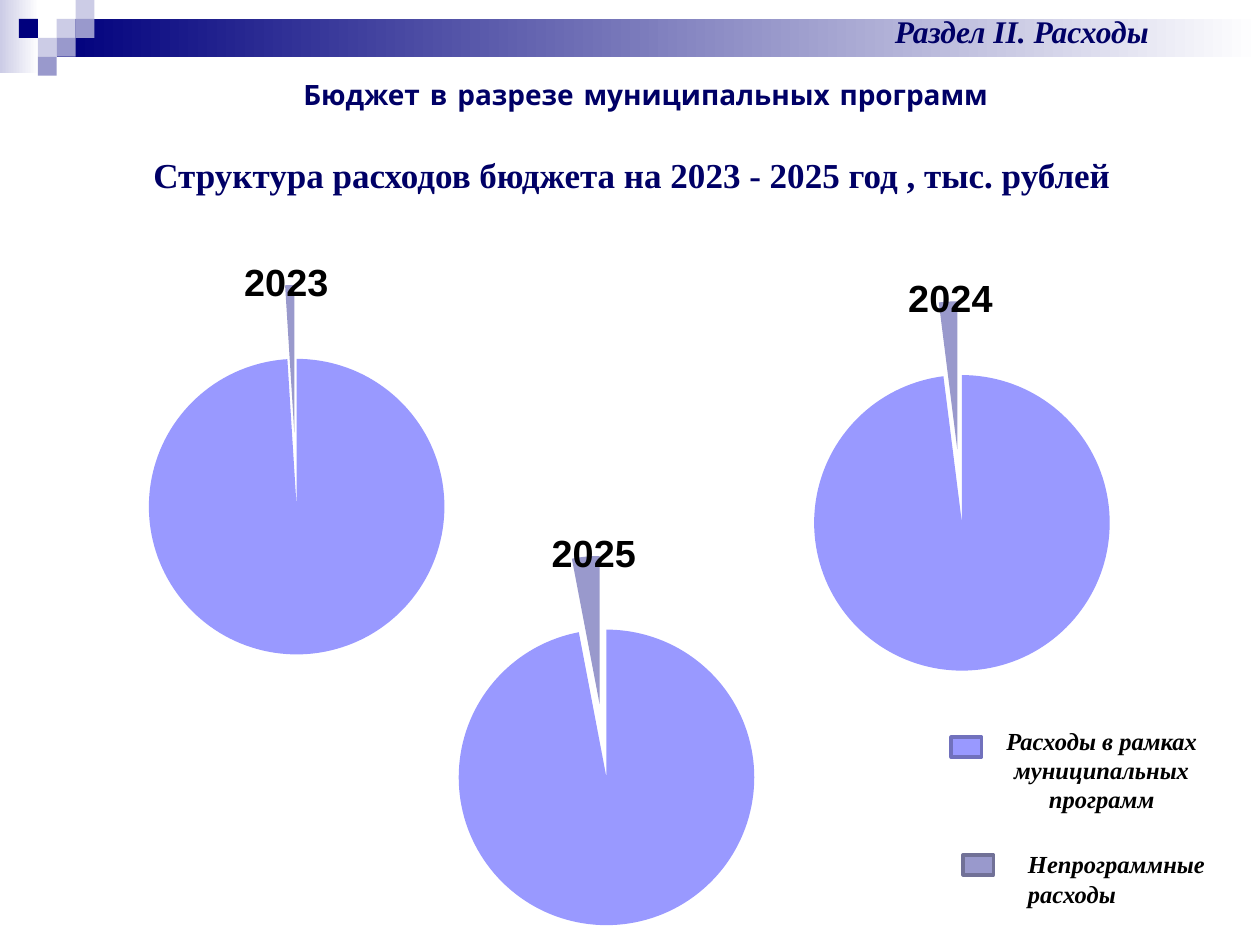
from lxml.etree import SubElement
from pptx import Presentation
from pptx.chart.data import CategoryChartData
from pptx.dml.color import RGBColor
from pptx.enum.chart import XL_CHART_TYPE
from pptx.enum.shapes import MSO_SHAPE
from pptx.enum.text import MSO_ANCHOR, PP_ALIGN
from pptx.oxml.ns import qn
from pptx.util import Pt

THEME = dict(
    navy="00007D", pale="CCCCE6", mid="9999CC", white="FFFFFF", ink="000066", black="000000",
    program="9999FF", program_line="7171BD", other="9999CC", other_line="717197",
    serif="Times New Roman", casual="Comic Neue", sans="Arial",
    heading=20, section=18, subtitle=16, legend=14, chart=18, chart_title=21.6,
)

TITLE = "Структура расходов бюджета на 2023 - 2025 год , тыс. рублей"
SECTION = "Раздел II. Расходы"
SUBTITLE = "Бюджет в разрезе муниципальных программ"

# year, left, top, shares of programme and other spending
PIES = [
    ("2023", 8.6, 107.3, (99, 1)),
    ("2024", 388.1, 116.6, (98, 2)),
    ("2025", 184.3, 262.1, (97, 3)),
]
PIE_SIZE = (317.5, 277.9)
TITLE_LAYOUT = dict(x=0.4, y=0.13)
PLOT_LAYOUT = dict(x=0.17, y=0.2, w=0.67, h=0.76)

# text, text box, alignment, key position, key colour name
LEGEND = [
    ("Расходы в рамках муниципальных программ", (558.7, 411.1, 141.8, 58.3),
     PP_ALIGN.CENTER, (543.6, 421.2), "program"),
    ("Непрограммные расходы", (580.3, 481.7, 118.8, 58.3),
     PP_ALIGN.LEFT, (550.4, 488.5), "other"),
]
KEY_SIZE = (17.3, 11.5)

# column, row, colour name of the corner mosaic
CELL = 10.8
MOSAIC = [
    (3, 1, "pale"), (4, 0, "pale"), (4, 1, "mid"), (2, 2, "pale"),
    (1, 1, "navy"), (3, 2, "mid"), (2, 3, "mid"),
]


def color(name):
    return RGBColor.from_string(THEME[name])


def add_rect(slide, box, fill, fade_to=None, line=None):
    sp = slide.shapes.add_shape(MSO_SHAPE.RECTANGLE, *map(Pt, box))
    sp.shadow.inherit = False
    if fade_to:
        sp.fill.gradient()
        sp.fill.gradient_angle = 0
        for stop, name in zip(sp.fill.gradient_stops, (fill, fade_to)):
            stop.color.rgb = color(name)
    else:
        sp.fill.solid()
        sp.fill.fore_color.rgb = color(fill)
    if line:
        sp.line.color.rgb = color(line)
        sp.line.width = Pt(2)
    else:
        sp.line.fill.background()


def write(sp, text, size, font="serif", ink="ink", italic=False,
          align=PP_ALIGN.CENTER, top=3.6):
    tf = sp.text_frame
    tf.word_wrap = True
    tf.vertical_anchor = MSO_ANCHOR.TOP
    tf.margin_top = Pt(top)
    p = tf.paragraphs[0]
    p.alignment = align
    p.line_spacing = 1.0
    p.space_before = Pt(0)
    r = p.add_run()
    r.text = text
    r.font.name = THEME[font]
    r.font.size = Pt(THEME[size])
    r.font.bold = True
    r.font.italic = italic
    r.font.color.rgb = color(ink)


def add_text(slide, box, text, size, **style):
    write(slide.shapes.add_textbox(*map(Pt, box)), text, size, **style)


def manual_layout(parent, before, inner=False, **fractions):
    """Place a chart part by fractions of the chart area."""
    for old in parent.findall(qn("c:layout")):
        parent.remove(old)
    layout = SubElement(parent, qn("c:layout"))
    parent.find(qn(before)).addprevious(layout)
    manual = SubElement(layout, qn("c:manualLayout"))
    if inner:
        SubElement(manual, qn("c:layoutTarget"), val="inner")
    for key in "xy":
        SubElement(manual, qn(f"c:{key}Mode"), val="edge")
    for key, value in fractions.items():
        SubElement(manual, qn(f"c:{key}"), val=str(value))


def add_pie(slide, year, left, top, shares):
    data = CategoryChartData()
    data.categories = ["1", "2"]
    data.add_series(year, shares)
    box = map(Pt, (left, top, *PIE_SIZE))
    chart = slide.shapes.add_chart(XL_CHART_TYPE.PIE, *box, data).chart
    chart.has_legend = False
    chart.font.name = THEME["sans"]
    chart.font.size = Pt(THEME["chart"])
    chart.font.color.rgb = color("black")

    chart.has_title = True
    title = chart.chart_title
    p = title.text_frame.paragraphs[0]
    r = p.add_run()
    r.text = year
    r.font.name = THEME["sans"]
    r.font.size = Pt(THEME["chart_title"])
    r.font.bold = True
    r.font.color.rgb = color("black")

    plot = chart.plots[0]
    plot.vary_by_categories = True
    series = plot.series[0]
    for i, name in enumerate(("program", "other")):
        fmt = series.points[i].format
        fmt.fill.solid()
        fmt.fill.fore_color.rgb = color(name)
        fmt.line.fill.background()
    ser = series._element
    explosion = SubElement(ser, qn("c:explosion"), val="25")
    ser.find(qn("c:dPt")).addprevious(explosion)

    area = chart._chartSpace.chart.plotArea
    manual_layout(area, "c:pieChart", inner=True, **PLOT_LAYOUT)
    manual_layout(title._element, "c:overlay", **TITLE_LAYOUT)


def main():
    prs = Presentation()
    prs.slide_width, prs.slide_height = Pt(720), Pt(540)
    slide = prs.slides.add_slide(prs.slide_layouts[5])

    add_rect(slide, (0, 0, 22.3, 41.8), "pale", fade_to="white")
    add_rect(slide, (3 * CELL, CELL, 720 - 3 * CELL, 2 * CELL), "navy", fade_to="white")
    for col, row, name in MOSAIC:
        add_rect(slide, (col * CELL, row * CELL, CELL, CELL), name)

    title = slide.shapes.title
    title.left, title.top, title.width, title.height = map(Pt, (54, 82.8, 614.2, 53.3))
    write(title, TITLE, "heading", top=5)
    add_text(slide, (450.7, 3.6, 266.4, 28.8), SECTION, "section", italic=True)
    add_text(slide, (63.4, 41, 611.3, 26.6), SUBTITLE, "subtitle", font="casual")

    for pie in PIES:
        add_pie(slide, *pie)
    for text, box, align, key, name in LEGEND:
        add_rect(slide, (*key, *KEY_SIZE), name, line=f"{name}_line")
        add_text(slide, box, text, "legend", ink="black", italic=True, align=align)

    prs.save("out.pptx")


if __name__ == "__main__":
    main()
